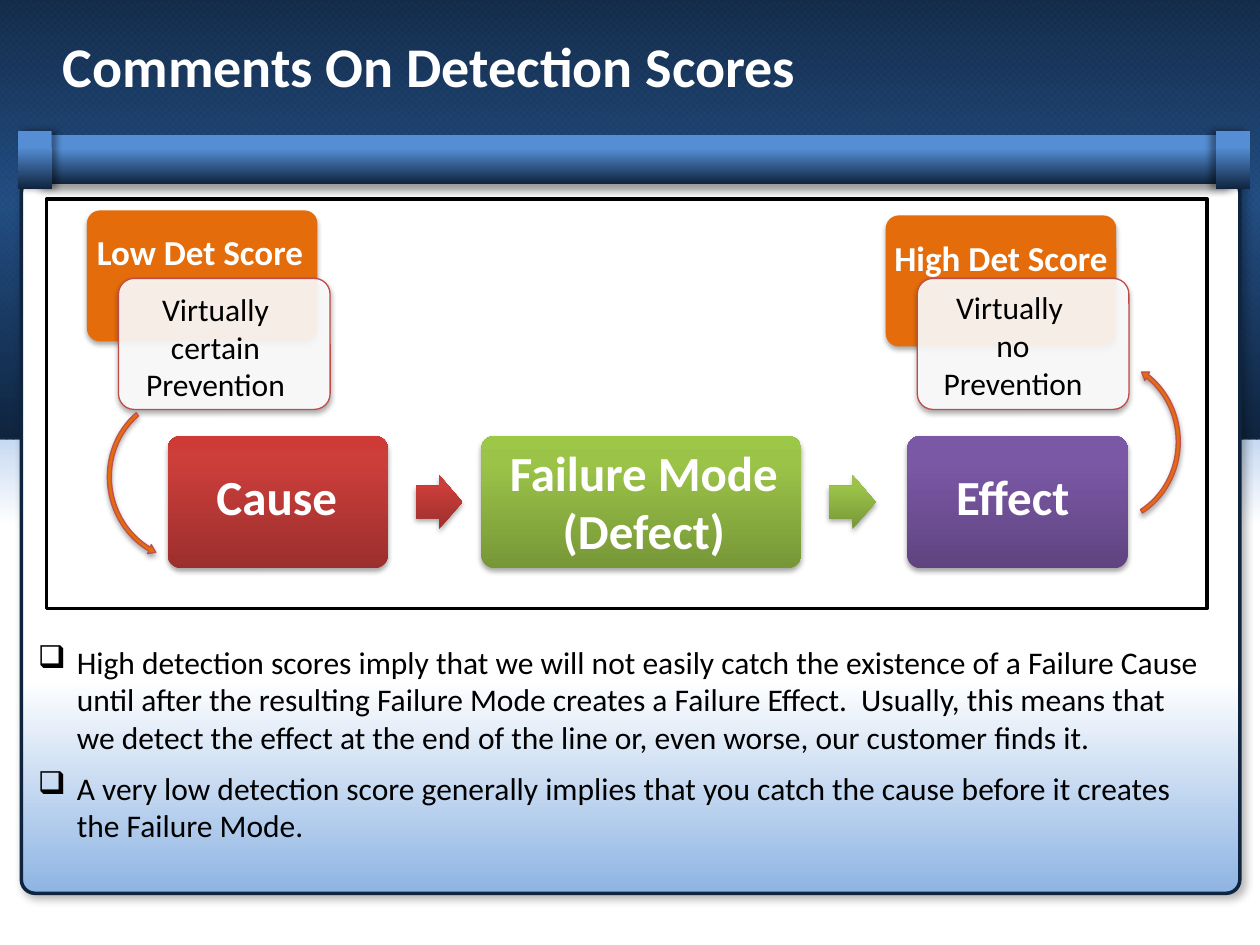
"""Build the slide on detection scores."""
import pptx
import pptx.dml.color
import pptx.enum.dml
import pptx.enum.shapes
import pptx.enum.text
import pptx.oxml
import pptx.oxml.ns
import pptx.util

Inches = pptx.util.Inches
Pt = pptx.util.Pt
RGBColor = pptx.dml.color.RGBColor
KIND = pptx.enum.shapes.MSO_SHAPE
ALIGN = pptx.enum.text.PP_ALIGN
FIT = pptx.enum.text.MSO_AUTO_SIZE

WHITE = RGBColor(0xFF, 0xFF, 0xFF)
BLACK = RGBColor(0x00, 0x00, 0x00)
NAVY = RGBColor(0x0F, 0x24, 0x3E)
DEEP = RGBColor(0x1F, 0x49, 0x7D)
BLUE = RGBColor(0x55, 0x8E, 0xD5)
PALE = RGBColor(0x8E, 0xB4, 0xE3)
ORANGE = RGBColor(0xE4, 0x6C, 0x0A)
BRICK = RGBColor(0xBF, 0x4C, 0x48)
ROSE = RGBColor(0xC0, 0x50, 0x4D)
REDS = [(0, RGBColor(0x9C, 0x2F, 0x2D)), (80, RGBColor(0xCB, 0x3E, 0x3A)),
        (100, RGBColor(0xCE, 0x3B, 0x37))]
GREENS = [(0, RGBColor(0x77, 0x97, 0x37)), (80, RGBColor(0x9B, 0xC3, 0x48)),
          (100, RGBColor(0x9D, 0xC7, 0x46))]
PLUMS = [(0, RGBColor(0x5F, 0x44, 0x80)), (80, RGBColor(0x7B, 0x58, 0xA6)),
         (100, RGBColor(0x7C, 0x57, 0xA8))]
STEEL = [(28, BLUE), (100, NAVY)]
SOFT = (35, 3.1, 1.8, 90)

HEAD = {"size": Pt(32), "bold": True, "color": WHITE}
STEP = {"size": Pt(28), "bold": True, "color": WHITE}
SCORE = {"size": Pt(20), "bold": True, "color": WHITE}
BODY = {"size": Pt(18), "bold": False, "color": BLACK}
POINTS = [
    "High detection scores imply that we will not easily catch the existence of "
    "a Failure Cause until after the resulting Failure Mode creates a Failure "
    "Effect.  Usually, this means that we detect the effect at the end of the "
    "line or, even worse, our customer finds it.",
    "A very low detection score generally implies that you catch the cause "
    "before it creates the Failure Mode.",
]


def make_xml(tag, attrs="", inner=""):
    """Return one drawing element."""
    space = pptx.oxml.ns.nsdecls("a")
    return pptx.oxml.parse_xml(f"<a:{tag} {space} {attrs}>{inner}</a:{tag}>")


def tint(color, alpha=100):
    """Return the markup of a colour with its alpha."""
    return f'<a:srgbClr val="{color}"><a:alpha val="{alpha * 1000}"/></a:srgbClr>'


def blend(shape, stops, angle):
    """Fill a shape with a linear gradient."""
    shape.fill.background()
    marks = "".join(f'<a:gs pos="{stop * 1000}">{tint(*color)}</a:gs>'
                    for stop, *color in stops)
    inner = f'<a:gsLst>{marks}</a:gsLst><a:lin ang="{angle * 60000}" scaled="0"/>'
    props = shape._element.spPr
    blank = props.find(pptx.oxml.ns.qn("a:noFill"))
    props.replace(blank, make_xml("gradFill", 'rotWithShape="1"', inner))


def cast(shape, alpha, blur, dist, angle):
    """Give a shape an outer shadow."""
    attrs = (f'blurRad="{Pt(blur)}" dist="{Pt(dist)}" dir="{angle * 60000}" '
             'algn="ctr" rotWithShape="0"')
    effects = shape._element.spPr.find(pptx.oxml.ns.qn("a:effectLst"))
    effects.append(make_xml("outerShdw", attrs, tint(BLACK, alpha)))


def add_block(slide, kind, box, fill=None, angle=90, line=None, shade=None,
              adjust=(), turn=0):
    """Add a preset shape with a plain, blended or empty fill."""
    shape = slide.shapes.add_shape(kind, *map(Inches, box))
    shape.shadow.inherit = False
    shape.rotation = turn
    for index, value in enumerate(adjust):
        shape.adjustments[index] = value
    if isinstance(fill, list):
        blend(shape, fill, angle)
    elif fill is None:
        shape.fill.background()
    else:
        shape.fill.solid()
        shape.fill.fore_color.rgb = fill
    if line:
        shape.line.color.rgb, shape.line.width = line[0], Pt(line[1])
    else:
        shape.line.fill.background()
    if shade:
        cast(shape, *shade)
    return shape


def add_text(slide, box, lines, style, align=ALIGN.LEFT, wrap=False, inset=None):
    """Add a text box with one paragraph per line."""
    frame = slide.shapes.add_textbox(*map(Inches, box)).text_frame
    frame.word_wrap, frame.auto_size = wrap, FIT.SHAPE_TO_FIT_TEXT
    if inset is not None:
        for side in ("left", "top", "right", "bottom"):
            setattr(frame, f"margin_{side}", Inches(inset))
    for index, line in enumerate(lines):
        para = frame.add_paragraph() if index else frame.paragraphs[0]
        para.text, para.alignment = line, align
        for run in para.runs:
            run.font.name = "Calibri"
            for name, value in style.items():
                if name == "color":
                    run.font.color.rgb = value
                else:
                    setattr(run.font, name, value)
    return frame


def add_points(slide):
    """Add the list with square bullets."""
    frame = add_text(slide, (0.3, 5.1, 9.25, 1.64), POINTS, BODY, wrap=True, inset=0)
    for index, para in enumerate(frame.paragraphs):
        if index:
            para.space_before = Pt(7.2)
        props = para._p.get_or_add_pPr()
        props.set("marL", str(Inches(0.31)))
        props.set("indent", str(-Inches(0.31)))
        props.append(make_xml("buChar", 'char="❑"'))


def add_scene(slide):
    """Add the backdrop, the panel and the scroll bar."""
    add_block(slide, KIND.RECTANGLE, (-0.01, 2.83, 10.03, 4.63),
              [(0, PALE), (29, WHITE), (100, WHITE)])
    band = (-0.03, -0.01, 10.04, 3.5)
    fill = add_block(slide, KIND.RECTANGLE, band).fill
    fill.patterned()
    fill.pattern = pptx.enum.dml.MSO_PATTERN.from_xml("openDmnd")
    fill.fore_color.rgb, fill.back_color.rgb = NAVY, BLUE
    add_block(slide, KIND.RECTANGLE, band,
              [(0, NAVY, 90), (46, DEEP, 90), (100, NAVY)])
    add_block(slide, KIND.ROUNDED_RECTANGLE, (0.17, 1.42, 9.67, 5.67),
              [(70, WHITE), (100, PALE)], line=(NAVY, 2),
              shade=(30, 4.5, 2.6, 53), adjust=[0.019])
    for box, angle in [((0.32, 1.07, 9.42, 0.39), 90),
                       ((0.14, 1.04, 0.27, 0.46), 0),
                       ((9.65, 1.04, 0.27, 0.46), 180)]:
        add_block(slide, KIND.RECTANGLE, box, STEEL, shade=(40, 4, 3, angle))


def add_score(slide, left, top, title, title_box, note, note_box):
    """Add an orange score card with its white note."""
    add_block(slide, KIND.ROUNDED_RECTANGLE, (left, top, 1.83, 1.04), ORANGE,
              shade=SOFT, adjust=[0.1])
    add_block(slide, KIND.ROUNDED_RECTANGLE, (left + 0.25, 2.21, 1.68, 1.04),
              [(0, WHITE, 90), (100, WHITE, 90)], line=(BRICK, 0.75),
              shade=SOFT, adjust=[0.12])
    add_text(slide, title_box, [title], SCORE)
    add_text(slide, note_box, [note], BODY, ALIGN.CENTER, wrap=True)


def add_step(slide, left, width, fill, lines, box, next_left=None):
    """Add a step of the chain and the arrow to the next one."""
    add_block(slide, KIND.ROUNDED_RECTANGLE, (left, 3.46, width, 1.05), fill, 270,
              shade=SOFT, adjust=[0.1])
    if next_left:
        add_block(slide, KIND.RIGHT_ARROW, (next_left, 3.77, 0.37, 0.43), fill, 270,
                  shade=SOFT, adjust=[0.6, 0.5])
    align = ALIGN.CENTER if len(lines) > 1 else ALIGN.LEFT
    add_text(slide, box, lines, STEP, align)


def main():
    """Build and save the deck."""
    deck = pptx.Presentation()
    deck.slide_width, deck.slide_height = Inches(10), Inches(7.5)
    slide = deck.slides.add_slide(deck.slide_layouts[6])
    add_scene(slide)
    add_text(slide, (0.5, 0.25, 9, 0.54), ["Comments On Detection Scores"], HEAD,
             wrap=True, inset=0)
    add_step(slide, 1.33, 1.75, REDS, ["Cause"], (1.62, 3.65, 1.17, 0.57), 3.3)
    add_step(slide, 3.82, 2.54, GREENS, ["Failure Mode", "(Defect)"],
             (3.93, 3.46, 2.36, 1.04), 6.58)
    add_step(slide, 7.2, 1.75, PLUMS, ["Effect"], (7.49, 3.65, 1.12, 0.57))
    add_points(slide)
    add_score(slide, 0.69, 1.67, "Low Det Score", (0.67, 1.78, 1.86, 0.44),
              "Virtually certain\vPrevention", (0.9, 2.25, 1.62, 1.01))
    add_score(slide, 7.03, 1.71, "High Det Score", (7, 1.83, 1.91, 0.44),
              "Virtually \vno\vPrevention", (7.23, 2.24, 1.62, 1.01))
    for left, top, turn in [(0.79, 3.15, 82.4), (8.06, 2.86, 270)]:
        add_block(slide, KIND.LEFT_CIRCULAR_ARROW, (left, top, 1.37, 1.29), ORANGE,
                  line=(ROSE, 0.75), shade=SOFT, turn=turn,
                  adjust=[0.025, 3.094, 20.849, 90.245, 0.03])
    add_block(slide, KIND.RECTANGLE, (0.37, 1.58, 9.21, 3.25), line=(BLACK, 2))
    deck.save("out.pptx")


if __name__ == "__main__":
    main()
